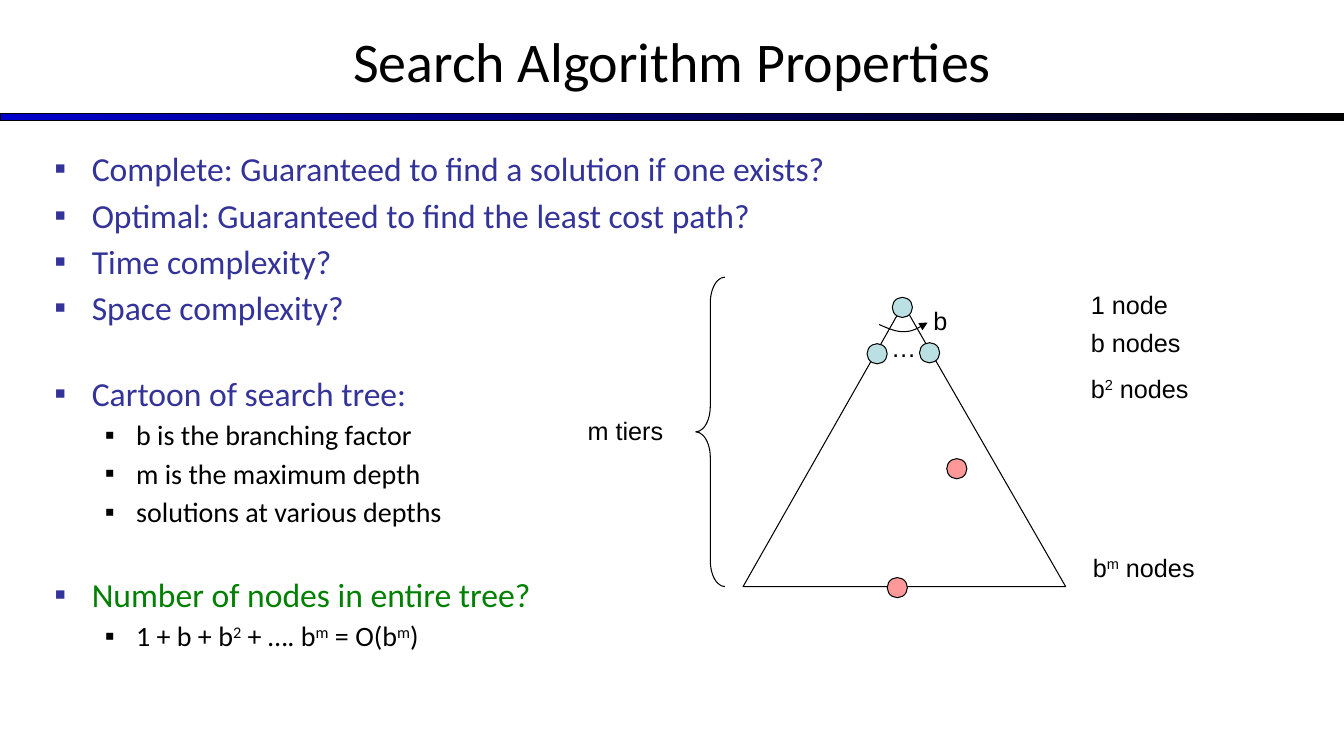
from lxml import etree
from pptx import Presentation
from pptx import util as u
from pptx.dml.color import RGBColor
from pptx.enum import shapes, text
from pptx.oxml.ns import qn

prs = Presentation()
prs.slide_width, prs.slide_height = u.Inches(13.33), u.Inches(7.5)
slide = prs.slides.add_slide(prs.slide_layouts[1])
rgb = RGBColor.from_string
CELL = prs.slide_height / 90  # grid of 160 columns by 90 rows


def grid(*cells):
    return [u.Emu(round(n * CELL)) for n in cells]


def write(paragraph, words, font, size, color):
    """Add runs; parts between ^ marks are superscripts."""
    for i, part in enumerate(words.split("^")):
        if part:
            run = paragraph.add_run()
            run.text = part
            run.font.name, run.font.size = font, u.Pt(size)
            run.font.color.rgb = rgb(color)
            if i % 2:
                run._r.get_or_add_rPr().set("baseline", "30000")


# Rule under the title
rule = slide.shapes.add_shape(shapes.MSO_SHAPE.RECTANGLE, *grid(0, 13.56, 160, 0.84))
rule.shadow.inherit = False
rule.fill.gradient()
rule.fill.gradient_angle = 0
for stop, color in zip(rule.fill.gradient_stops, ("0000CC", "000000")):
    stop.color.rgb = rgb(color)
rule.line.color.rgb, rule.line.width = rgb("000000"), u.Pt(0.75)

# Title
title = slide.shapes.title
title.left, title.top, title.width, title.height = grid(0, -0.36, 160, 15)
title.text_frame.vertical_anchor = text.MSO_ANCHOR.MIDDLE
heading = title.text_frame.paragraphs[0]
heading.alignment = text.PP_ALIGN.CENTER
write(heading, "Search Algorithm Properties", "Calibri", 40, "000000")

# Properties list: level, text, colour, space before
BLUE, GREEN, BLACK = "333399", "008000", "000000"
properties = [
    (0, "Complete: Guaranteed to find a solution if one exists?", BLUE, 0),
    (0, "Optimal: Guaranteed to find the least cost path?", BLUE, 4.3),
    (0, "Time complexity?", BLUE, 4.3),
    (0, "Space complexity?", BLUE, 4.3),
    (0, "Cartoon of search tree:", BLUE, 32.2),
    (1, "b is the branching factor", BLACK, 3.5),
    (1, "m is the maximum depth", BLACK, 3.5),
    (1, "solutions at various depths", BLACK, 3.5),
    (0, "Number of nodes in entire tree?", GREEN, 32.2),
    (1, "1 + b + b^2^ + …. b^m^ = O(b^m^)", BLACK, 3.5),
]
body = slide.placeholders[1]
body.left, body.top, body.width, body.height = grid(5.28, 17.04, 149.28, 62.04)
body.text_frame.auto_size = text.MSO_AUTO_SIZE.NONE
body.text_frame.vertical_anchor = text.MSO_ANCHOR.TOP
for i, (level, words, color, before) in enumerate(properties):
    item = body.text_frame.paragraphs[0] if i == 0 else body.text_frame.add_paragraph()
    item.level = level
    indent = item._p.get_or_add_pPr()
    indent.set("marL", str(u.Inches((0.37, 0.81)[level])))
    indent.set("indent", str(-u.Inches((0.37, 0.31)[level])))
    bullet_color = etree.SubElement(indent, qn("a:buClr"))
    etree.SubElement(bullet_color, qn("a:srgbClr"), val=(BLUE, BLACK)[level])
    etree.SubElement(indent, qn("a:buFont"), typeface="Arial")
    etree.SubElement(indent, qn("a:buChar"), char="▪")
    item.space_before = u.Pt(before)
    write(item, words, "Calibri", (24, 20)[level], color)

# Tree outline and branching arrow, whose curve is two cubic pieces
triangle = [(88.44, 69.84), (126.84, 69.84), (107.52, 36.24)]
pieces = [
    [(104.64, 38.64), (105.72, 39.12), (106.8, 39.6), (107.76, 39.48)],
    [(107.76, 39.48), (108.72, 39.48), (109.56, 38.88), (110.4, 38.4)],
]
arc = [
    tuple(sum(w * p[axis] for w, p in zip(
        ((1 - t) ** 3, 3 * t * (1 - t) ** 2, 3 * t * t * (1 - t), t ** 3), piece))
        for axis in (0, 1))
    for piece in pieces for t in (k / 8 for k in range(9))
]
for points, closed in ((triangle, True), (arc, False)):
    corners = [grid(*point) for point in points]
    builder = slide.shapes.build_freeform(*corners[0])
    builder.add_line_segments(corners[1:], close=closed)
    outline = builder.convert_to_shape()
    outline.shadow.inherit = False
    outline.fill.background()
    outline.line.color.rgb, outline.line.width = rgb(BLACK), u.Pt(0.75)
    if not closed:
        etree.SubElement(outline.line._get_or_add_ln(), qn("a:tailEnd"), type="triangle")

# Tree nodes in blue, solutions in red
NODE, SOLUTION = "BBE0E3", "FF9999"
for left, top, color in [
    (106.2, 35.4, NODE), (103.2, 40.92, NODE), (109.44, 40.8, NODE),
    (105.6, 68.76, SOLUTION), (112.68, 54.6, SOLUTION),
]:
    node = slide.shapes.add_shape(shapes.MSO_SHAPE.OVAL, *grid(left, top, 2.4, 2.4))
    node.shadow.inherit = False
    node.fill.solid()
    node.fill.fore_color.rgb = rgb(color)
    node.line.color.rgb, node.line.width = rgb(BLACK), u.Pt(0.75)

# Brace over the tiers
brace = slide.shapes.add_shape(shapes.MSO_SHAPE.LEFT_BRACE, *grid(82.8, 33, 3.48, 36.84))
brace.shadow.inherit = False
brace.adjustments[0] = 0.88
brace.fill.background()
brace.line.color.rgb, brace.line.width = rgb(BLACK), u.Pt(0.75)

# Labels
for left, top, width, words in [
    (104.88, 39, 3.6, "…"),
    (109.92, 35.76, 3.96, "b"),
    (128.64, 33.84, 14.64, "1 node"),
    (128.64, 38.4, 14.64, "b nodes"),
    (128.64, 43.8, 14.64, "b^2^ nodes"),
    (128.88, 65.16, 19.2, "b^m^ nodes"),
    (68.76, 48.84, 16.56, "m tiers"),
]:
    label = slide.shapes.add_textbox(*grid(left, top, width, 4.8)).text_frame
    label.word_wrap = True
    write(label.paragraphs[0], words, "Arial", 18, BLACK)

prs.save("out.pptx")
